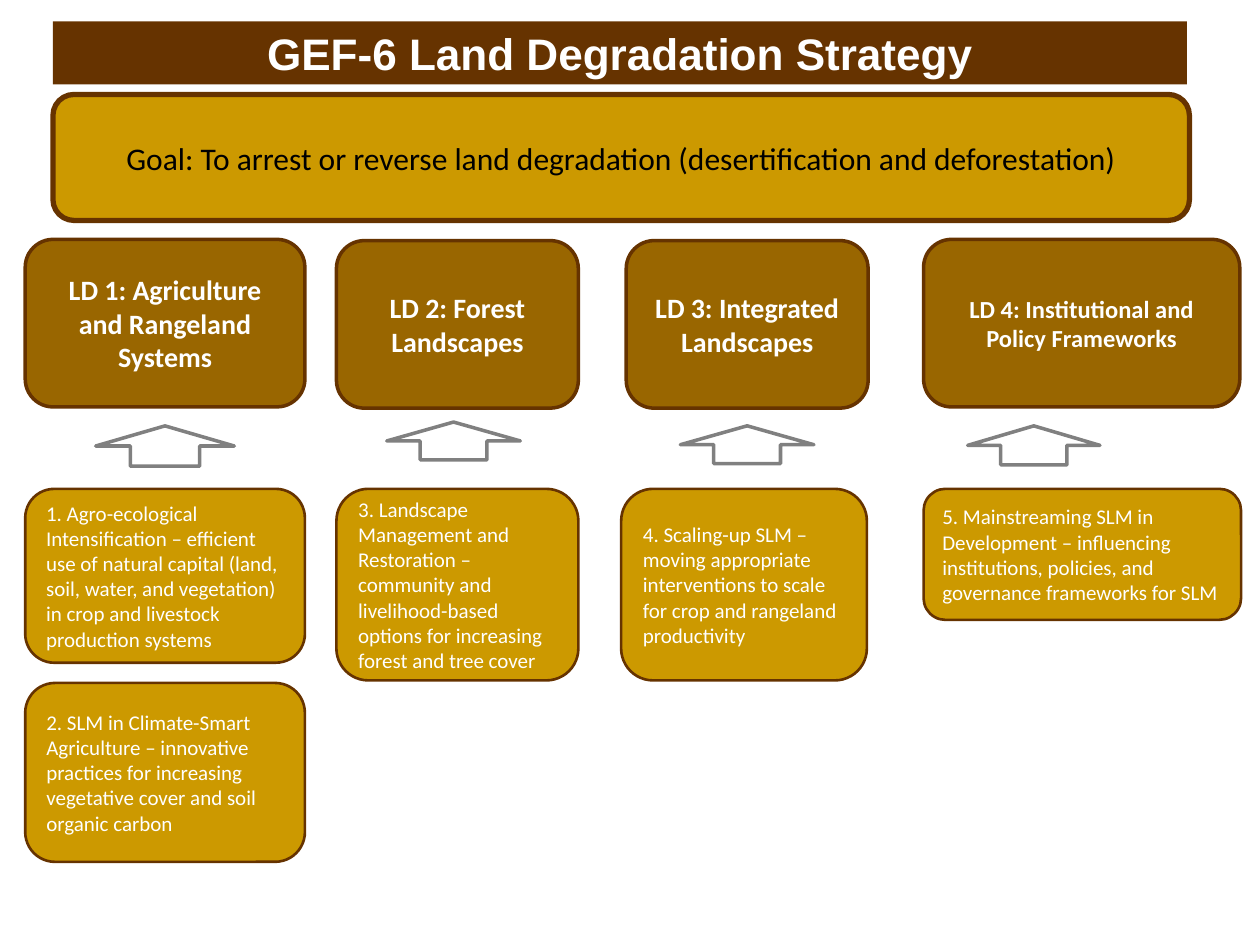
from pptx import Presentation
from pptx.dml.color import RGBColor as RGB
from pptx.enum.shapes import MSO_SHAPE as SHAPE
from pptx.enum.text import MSO_ANCHOR as ANCHOR, MSO_AUTO_SIZE as AUTOSIZE, PP_ALIGN as ALIGN
from pptx.util import Inches, Pt

HEADING = "GEF-6 Land Degradation Strategy"
GOAL = "Goal: To arrest or reverse land degradation (desertification and deforestation)"

OBJECTIVES = [
    {
        "name": "LD 1: Agriculture and Rangeland Systems",
        "size": "objective", "left": 0.2, "top": 1.9, "width": 2.22,
        "arrow": (0.76, 3.38, 1.1, 0.32),
        "programs": [
            ("1. Agro-ecological Intensification – efficient use of natural capital "
             "(land, soil, water, and vegetation) in crop and livestock production systems",
             (0.2, 3.88, 2.22, 1.38)),
            ("2. SLM in Climate-Smart Agriculture – innovative practices for increasing "
             "vegetative cover and soil organic carbon",
             (0.2, 5.42, 2.22, 1.42)),
        ],
    },
    {
        "name": "LD 2: Forest Landscapes",
        "size": "objective", "left": 2.67, "top": 1.91, "width": 1.92,
        "arrow": (3.07, 3.35, 1.06, 0.3),
        "programs": [
            ("3. Landscape Management and Restoration – community and livelihood-based "
             "options for increasing forest and tree cover",
             (2.67, 3.88, 1.92, 1.52)),
        ],
    },
    {
        "name": "LD 3: Integrated Landscapes",
        "size": "objective", "left": 4.97, "top": 1.91, "width": 1.92,
        "arrow": (5.4, 3.38, 1.06, 0.3),
        "programs": [
            ("4. Scaling-up SLM – moving appropriate interventions to scale for crop "
             "and rangeland productivity",
             (4.93, 3.88, 1.95, 1.52)),
        ],
    },
    {
        "name": "LD 4: Institutional and Policy Frameworks",
        "size": "framework", "left": 7.33, "top": 1.9, "width": 2.51,
        "arrow": (7.68, 3.38, 1.05, 0.31),
        "programs": [
            ("5. Mainstreaming SLM in Development – influencing institutions, policies, "
             "and governance frameworks for SLM",
             (7.33, 3.88, 2.52, 1.04)),
        ],
    },
]
OBJECTIVE_HEIGHT = 1.33

THEME = {
    "fonts": {"heading": "Arial", "body": "Calibri"},
    "colors": {"brown": "663300", "ochre": "996600", "gold": "CC9900",
               "white": "FFFFFF", "black": "000000", "gray": "808080"},
    "sizes": {"heading": 25.2, "goal": 18, "objective": 16, "framework": 14, "program": 12},
}


def color(name):
    return RGB.from_string(THEME["colors"][name])


def paint(shape, fill):
    shape.fill.solid()
    shape.fill.fore_color.rgb = color(fill)


def write(shape, text, size, ink="white", font="body", bold=False, align=ALIGN.CENTER):
    frame = shape.text_frame
    frame.text = text
    frame.word_wrap = True
    frame.auto_size = AUTOSIZE.NONE
    frame.vertical_anchor = ANCHOR.MIDDLE
    paragraph = frame.paragraphs[0]
    paragraph.alignment = align
    paragraph.font.name = THEME["fonts"][font]
    paragraph.font.size = Pt(THEME["sizes"][size])
    paragraph.font.bold = bold
    paragraph.font.color.rgb = color(ink)


def add_outlined(slide, preset, box, fill, line, weight):
    shape = slide.shapes.add_shape(preset, *map(Inches, box))
    shape.shadow.inherit = False
    paint(shape, fill)
    shape.line.color.rgb = color(line)
    shape.line.width = Pt(weight)
    return shape


def add_card(slide, box, fill, weight, text, size, **style):
    card = add_outlined(slide, SHAPE.ROUNDED_RECTANGLE, box, fill, "brown", weight)
    write(card, text, size, **style)


def main():
    deck = Presentation()
    deck.slide_width, deck.slide_height = Inches(10), Inches(7.5)
    slide = deck.slides.add_slide(deck.slide_layouts.get_by_name("Title Only"))

    heading = slide.shapes.title
    heading.left, heading.top, heading.width, heading.height = map(Inches, (0.42, 0.17, 9, 0.5))
    paint(heading, "brown")
    write(heading, HEADING, "heading", font="heading", bold=True)

    add_card(slide, (0.42, 0.75, 9.02, 1), "gold", 3, GOAL, "goal", ink="black")

    for objective in OBJECTIVES:
        box = (objective["left"], objective["top"], objective["width"], OBJECTIVE_HEIGHT)
        add_card(slide, box, "ochre", 2, objective["name"], objective["size"], bold=True)
        add_outlined(slide, SHAPE.UP_ARROW, objective["arrow"], "white", "gray", 2)
        for program, program_box in objective["programs"]:
            add_card(slide, program_box, "gold", 1.5, program, "program", align=ALIGN.LEFT)

    deck.save("out.pptx")


if __name__ == "__main__":
    main()
